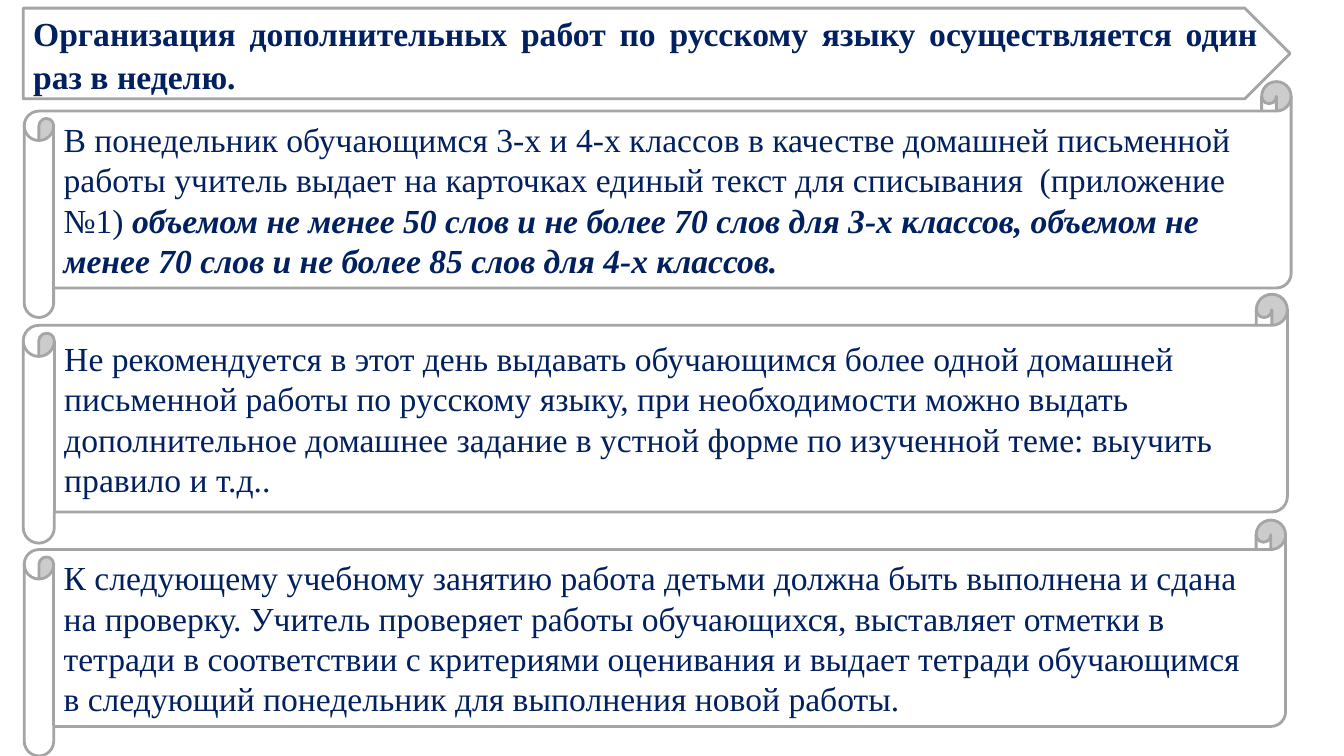
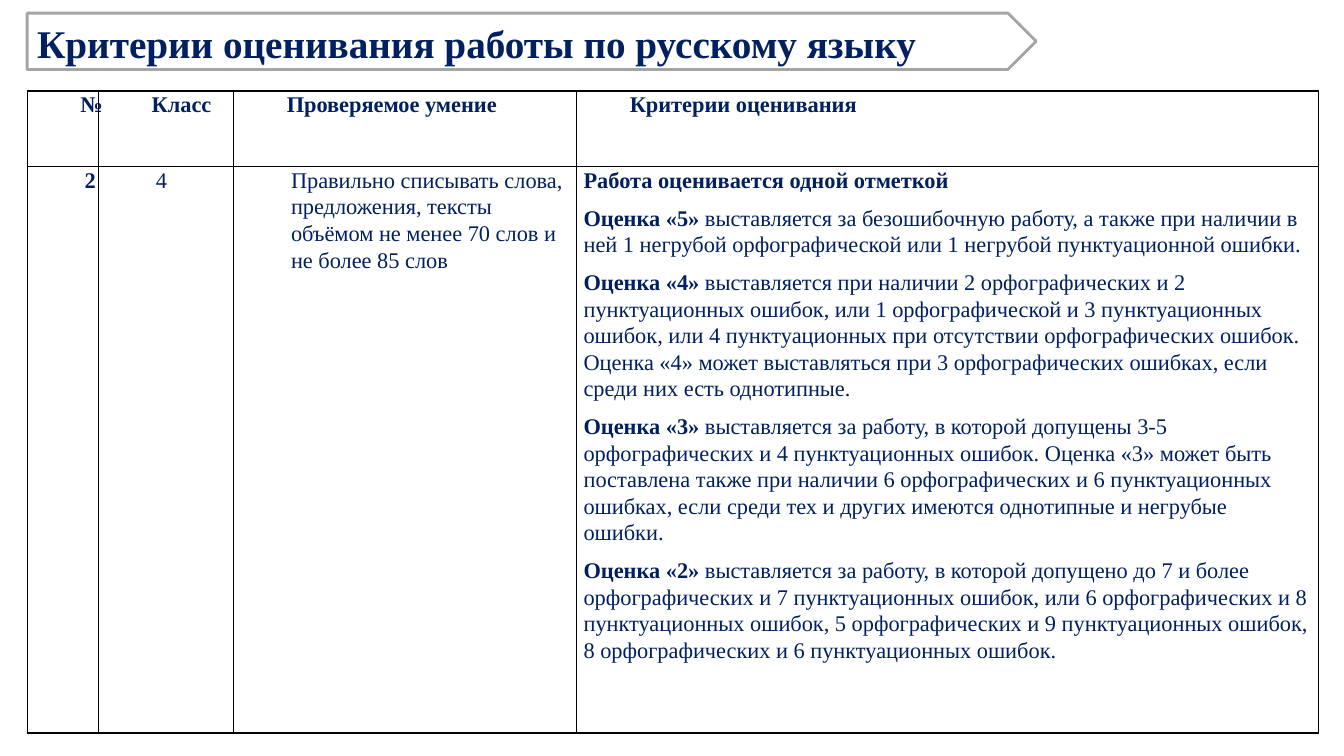
from lxml.etree import SubElement
from pptx import Presentation
from pptx.dml.color import RGBColor
from pptx.enum.shapes import MSO_SHAPE as Preset
from pptx.enum.text import MSO_ANCHOR as Anchor, PP_ALIGN as Align
from pptx.oxml.ns import qn
from pptx.util import Pt

COLORS = {"ink": "002060", "paper": "FFFFFF", "outline": "A5A5A5", "grid": "000000"}
FONT = "Times New Roman"

SCROLLS = [
    (17.3, 58.3, 905, 168.5, [
        ("В понедельник обучающимся 3-х и 4-х классов в качестве домашней письменной "
         "работы учитель выдает на карточках единый текст для списывания  (приложение №1) ", False),
        ("объемом не менее 50 слов и не более 70 слов для 3-х классов, "
         "объемом не менее 70 слов и не более 85 слов для 4-х классов.", True)]),
    (16.6, 210.2, 903, 177.8, [
        ("Не рекомендуется в этот день выдавать обучающимся более одной домашней письменной "
         "работы по русскому языку, при необходимости можно выдать дополнительное домашнее "
         "задание в устной форме по изученной теме: выучить правило и т.д..", False)]),
    (17.3, 371.5, 901, 168.5, [
        ("К следующему учебному занятию работа детьми должна быть выполнена и сдана на проверку. "
         "Учитель проверяет работы обучающихся, выставляет отметки в тетради в соответствии "
         "с критериями оценивания и выдает тетради обучающимся в следующий понедельник "
         "для выполнения новой работы.", False)]),
]

HEADINGS = ["№", "Класс", "Проверяемое умение", "Критерии оценивания"]
SKILL = "Правильно списывать слова, предложения, тексты объёмом не менее 70 слов и не более 85 слов"
GRADES = [
    ("5", " выставляется за безошибочную работу, а также при наличии в ней 1 негрубой "
          "орфографической или 1 негрубой пунктуационной ошибки."),
    ("4", " выставляется при наличии 2 орфографических и 2 пунктуационных ошибок, "
          "или 1 орфографической и 3 пунктуационных ошибок, или 4 пунктуационных при отсутствии "
          "орфографических ошибок. Оценка «4» может выставляться при 3 орфографических ошибках, "
          "если среди них есть однотипные."),
    ("3", " выставляется за работу, в которой допущены 3-5 орфографических и 4 пунктуационных "
          "ошибок. Оценка «3» может быть поставлена также при наличии 6 орфографических "
          "и 6 пунктуационных ошибках, если среди тех и других имеются однотипные "
          "и негрубые ошибки."),
    ("2", " выставляется за работу, в которой допущено до 7 и более орфографических "
          "и 7 пунктуационных ошибок, или 6 орфографических и 8 пунктуационных ошибок, "
          "5 орфографических и 9 пунктуационных ошибок, 8 орфографических "
          "и 6 пунктуационных ошибок."),
]


class Deck:
    """Holds the shared style and the current slide."""

    def __init__(self):
        self.prs = Presentation()
        self.prs.slide_width, self.prs.slide_height = Pt(960), Pt(540)
        self.slide = None

    def new_slide(self):
        self.slide = self.prs.slides.add_slide(self.prs.slide_layouts[6])

    def color(self, name):
        return RGBColor.from_string(COLORS[name])

    def style(self, paragraph, size, bold=None, after=0, spacing=1.07):
        font = paragraph.font
        font.name, font.size, font.bold = FONT, Pt(size), bold
        font.color.rgb = self.color("ink")
        paragraph.line_spacing, paragraph.space_after = spacing, Pt(after)

    def panel(self, preset, left, top, width, height):
        panel = self.slide.shapes.add_shape(preset, Pt(left), Pt(top), Pt(width), Pt(height))
        panel.shadow.inherit = False
        panel.fill.solid()
        panel.fill.fore_color.rgb = self.color("paper")
        panel.line.color.rgb = self.color("outline")
        panel.line.width = Pt(2)
        panel.text_frame.word_wrap = True
        panel.text_frame.vertical_anchor = Anchor.MIDDLE
        return panel.text_frame.paragraphs[0]

    def title(self, text, left, top, width, height, size):
        heading = self.panel(Preset.PENTAGON, left, top, width, height)
        heading.text = text
        heading.alignment = Align.JUSTIFY
        self.style(heading, size, bold=True, after=8)

    def scroll(self, left, top, width, height, parts):
        message = self.panel(Preset.HORIZONTAL_SCROLL, left, top, width, height)
        message.alignment = Align.LEFT
        self.style(message, 24, spacing=1)
        for text, stressed in parts:
            run = message.add_run()
            run.text = text
            if stressed:
                run.font.bold = run.font.italic = True

    def table(self, left, top, widths, heights):
        frame = self.slide.shapes.add_table(
            len(heights), len(widths), Pt(left), Pt(top), Pt(sum(widths)), Pt(sum(heights)))
        grid = frame.table
        grid.first_row = grid.horz_banding = False
        for column, width in zip(grid.columns, widths):
            column.width = Pt(width)
        for row, height in zip(grid.rows, heights):
            row.height = Pt(height)
        return grid

    def cell(self, cell, paragraphs, margin, indent=0, after=0):
        cell.margin_left = cell.margin_right = Pt(margin)
        cell.margin_top = cell.margin_bottom = 0
        for index, parts in enumerate(paragraphs):
            frame = cell.text_frame
            paragraph = frame.add_paragraph() if index else frame.paragraphs[0]
            agreed = parts[0][1] if len(parts) == 1 else None
            self.style(paragraph, 16, bold=agreed, after=after)
            if indent:
                paragraph._p.get_or_add_pPr().set("marL", str(Pt(indent)))
            for text, bold in parts:
                run = paragraph.add_run()
                run.text = text
                if agreed is None:
                    run.font.bold = bold
        self.borders(cell)
        cell.fill.background()

    def borders(self, cell):
        for side in ("lnL", "lnR", "lnT", "lnB"):
            line = SubElement(cell._tc.get_or_add_tcPr(), qn(f"a:{side}"), w=str(Pt(1)))
            fill = SubElement(line, qn("a:solidFill"))
            SubElement(fill, qn("a:srgbClr"), val=COLORS["grid"])


def main():
    deck = Deck()

    deck.new_slide()
    deck.title("Организация дополнительных работ по русскому языку осуществляется "
               "один раз в неделю.", 16.6, 5.8, 905, 64.8, 24)
    for scroll in SCROLLS:
        deck.scroll(*scroll)

    deck.new_slide()
    deck.title("Критерии оценивания работы по русскому языку", 19.4, 9.4, 720.7, 40.3, 28)
    criteria = deck.table(19.4, 65, [51, 96.5, 245, 530], [54, 404.6])
    for column, heading in enumerate(HEADINGS):
        deck.cell(criteria.cell(0, column), [[(heading, True)]], 2, indent=36)
    for column, (text, bold) in enumerate([("2", True), ("4", False), (SKILL, False)]):
        deck.cell(criteria.cell(1, column), [[(text, bold)]], 5, indent=36)
    rules = [[("Работа оценивается одной отметкой", True)]]
    rules += [[(f"Оценка «{grade}»", True), (rule, False)] for grade, rule in GRADES]
    deck.cell(criteria.cell(1, 3), rules, 5, after=8)

    deck.prs.save("out.pptx")


if __name__ == "__main__":
    main()
